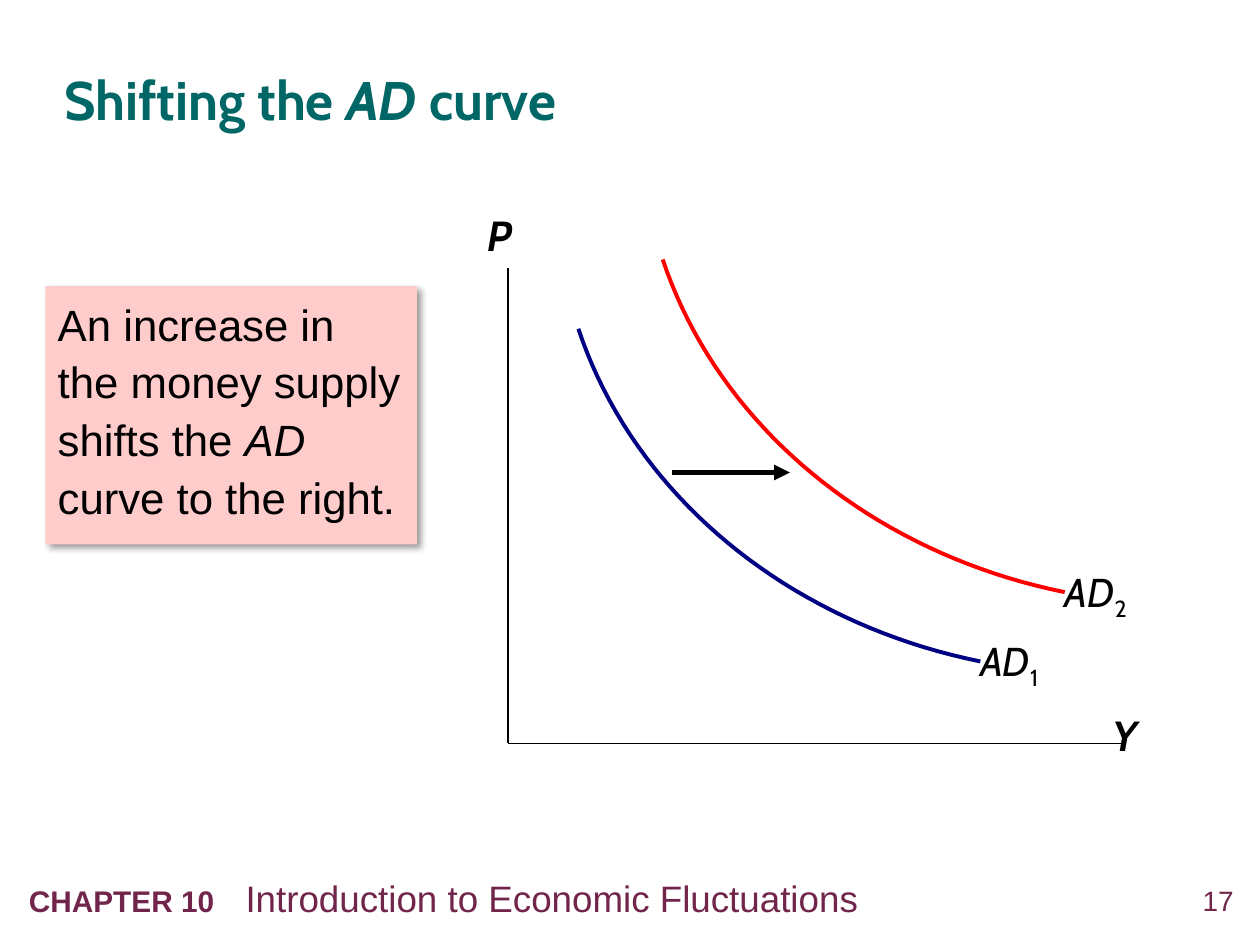
from lxml import etree
from pptx import Presentation, util as u
from pptx.dml.color import RGBColor
from pptx.enum import shapes, text
from pptx.oxml.ns import qn

COLORS = {"title": "006666", "footer": "71254B", "text": "000000",
          "note": "FFCCCC", "first": "000082", "second": "FF0000"}
ALIGN = text.PP_ALIGN


def rgb(name):
    return RGBColor.from_string(COLORS[name])


def add_run(paragraph, words, size, font="Arial", color="text",
            bold=False, italic=False, baseline=None):
    run = paragraph.add_run()
    run.text = words
    run.font.size = u.Pt(size)
    run.font.name = font
    run.font.bold = bold
    run.font.italic = italic
    run.font.color.rgb = rgb(color)
    if baseline is not None:
        run._r.get_or_add_rPr().set("baseline", str(baseline * 1000))


def add_text_box(slide, left, top, width, height, align=ALIGN.LEFT,
                 inset=True, wrap=True):
    """Add an empty text box and return its first paragraph."""
    box = slide.shapes.add_textbox(*map(u.Inches, (left, top, width, height)))
    frame = box.text_frame
    frame.word_wrap = wrap
    if not inset:
        frame.margin_left = frame.margin_right = 0
        frame.margin_top = frame.margin_bottom = 0
    frame.paragraphs[0].alignment = align
    return frame.paragraphs[0]


def add_line(slide, start, end, weight, arrow=False):
    line = slide.shapes.add_connector(
        shapes.MSO_CONNECTOR.STRAIGHT, *map(u.Inches, (*start, *end)))
    line.line.color.rgb = rgb("text")
    line.line.width = u.Pt(weight)
    if arrow:
        outline = line.line._get_or_add_ln()
        etree.SubElement(outline, qn("a:tailEnd"), type="triangle")
    etree.SubElement(line._element.spPr, qn("a:effectLst"))


def add_shadow(shape):
    effects = etree.SubElement(shape._element.spPr, qn("a:effectLst"))
    shadow = etree.SubElement(
        effects, qn("a:outerShdw"), blurRad=str(u.Pt(4)), dist=str(u.Pt(3)),
        dir=str(45 * 60000), algn="tl", rotWithShape="0")
    color = etree.SubElement(shadow, qn("a:srgbClr"), val=COLORS["text"])
    etree.SubElement(color, qn("a:alpha"), val="40000")


def add_title(slide, left, top, width, height):
    paragraph = add_text_box(slide, left, top, width, height, inset=False)
    paragraph.line_spacing = 1.05
    for words, italic in (("Shifting the ", False), ("AD", True), (" curve", False)):
        add_run(paragraph, words, 31, "Cabin", "title", True, italic)
    slide.shapes[-1].text_frame.vertical_anchor = text.MSO_ANCHOR.MIDDLE


def add_note(slide, left, top, width, height):
    note = slide.shapes.add_shape(
        shapes.MSO_SHAPE.RECTANGLE, *map(u.Inches, (left, top, width, height)))
    note.fill.solid()
    note.fill.fore_color.rgb = rgb("note")
    note.line.fill.background()
    add_shadow(note)
    frame = note.text_frame
    frame.word_wrap = True
    frame.vertical_anchor = text.MSO_ANCHOR.TOP
    paragraph = frame.paragraphs[0]
    paragraph.alignment = ALIGN.LEFT
    paragraph.line_spacing = 1.1
    for words, italic in (("An increase in the money supply shifts the ", False),
                          ("AD", True), (" curve to the right.", False)):
        add_run(paragraph, words, 25, italic=italic)


def add_demand_curve(slide, left, top, number, color):
    """Draw one falling curve from its upper left end, with its label."""
    controls = ((0, 0), (0.44, 1.32), (1.66, 2.33), (3.19, 2.64))
    steps = 40
    points = []
    for step in range(steps + 1):
        t = step / steps
        weights = ((1 - t) ** 3, 3 * t * (1 - t) ** 2, 3 * t ** 2 * (1 - t), t ** 3)
        x, y = (sum(w * c[axis] for w, c in zip(weights, controls)) for axis in (0, 1))
        points.append((u.Inches(left + x), u.Inches(top + y)))
    builder = slide.shapes.build_freeform(*points[0])
    builder.add_line_segments(points[1:], close=False)
    curve = builder.convert_to_shape()
    curve.fill.background()
    curve.line.color.rgb = rgb(color)
    curve.line.width = u.Pt(2.25)
    curve.shadow.inherit = False

    label = add_text_box(slide, left + 3.09, top + 2.39, 0.75, 0.48, wrap=False)
    add_run(label, "AD", 23, "Cabin", italic=True)
    add_run(label, number, 23, "Cabin", baseline=-25)


def add_graph(slide, left, top, width, height):
    # Axes and their names
    origin = (left, top + height)
    add_line(slide, (left, top), origin, 1)
    add_line(slide, origin, (left + width, top + height), 1)
    for name, x, y in (("P", left - 0.36, top - 0.52),
                       ("Y", left + width - 0.31, top + height - 0.32)):
        paragraph = add_text_box(slide, x, y, 0.6, 0.5, ALIGN.CENTER)
        add_run(paragraph, name, 24, "Cabin", bold=True, italic=True)

    # Curves before and after the shift
    add_demand_curve(slide, left + 0.56, top + 0.48, "1", "first")
    add_demand_curve(slide, left + 1.23, top - 0.07, "2", "second")
    arrow_y = top + 1.62
    add_line(slide, (left + 1.3, arrow_y), (left + 2.24, arrow_y), 3, arrow=True)


def add_footer(slide, left, top, width, height):
    paragraph = add_text_box(slide, left, top, 8.18, height)
    tabs = etree.SubElement(paragraph._p.get_or_add_pPr(), qn("a:tabLst"))
    etree.SubElement(tabs, qn("a:tab"), pos=str(u.Inches(1.72)), algn="l")
    add_run(paragraph, "CHAPTER 10\t", 17, color="footer", bold=True)
    add_run(paragraph, "Introduction to Economic Fluctuations", 21, color="footer")
    number = add_text_box(slide, left + width - 0.55, top + 0.11, 0.55, 0.32,
                          ALIGN.RIGHT, inset=False)
    add_run(number, "17", 16, color="footer")


def main():
    presentation = Presentation()
    presentation.slide_width = u.Inches(10)
    presentation.slide_height = u.Inches(7.5)
    slide = presentation.slides.add_slide(presentation.slide_layouts[6])
    add_footer(slide, 0.13, 6.9, 9.66, 0.45)
    add_title(slide, 0.51, 0.26, 9.02, 1.03)
    add_note(slide, 0.36, 2.27, 2.95, 2.05)
    add_graph(slide, 4.03, 2.13, 4.91, 3.77)
    presentation.save("out.pptx")


if __name__ == "__main__":
    main()
